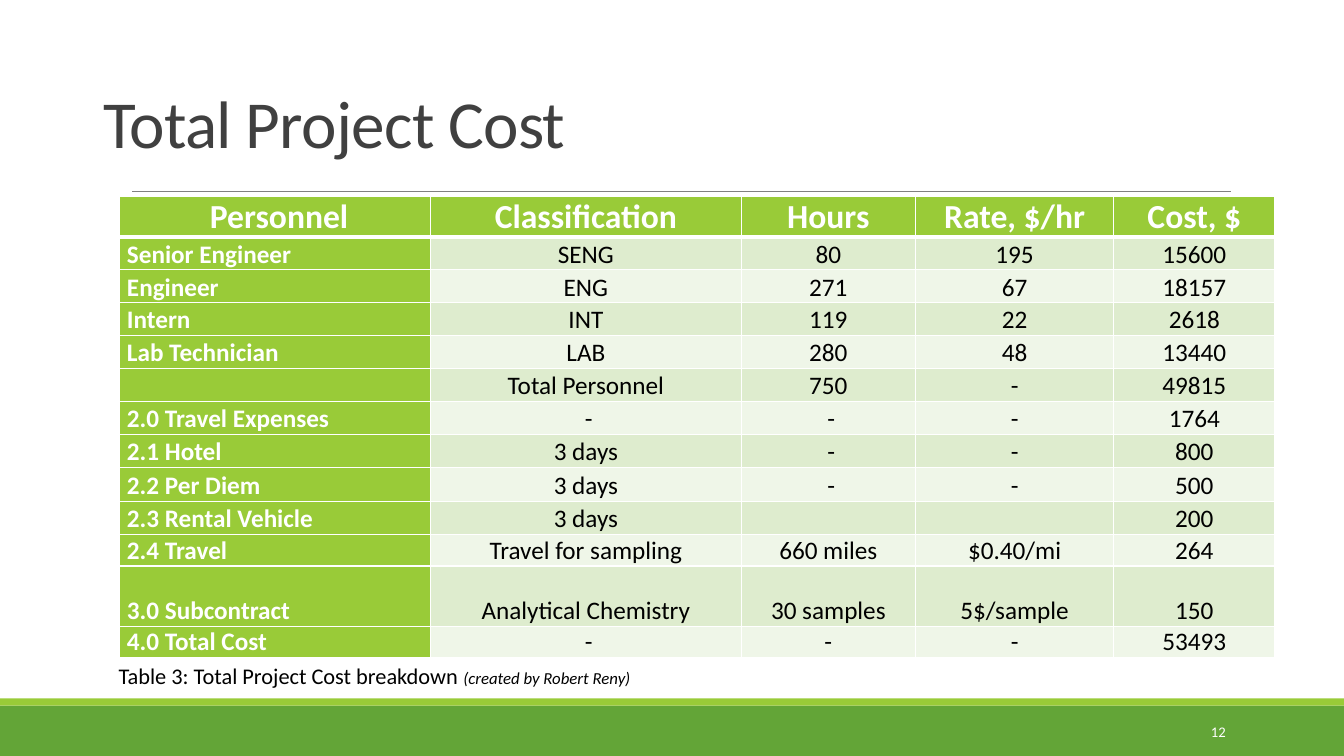
import pptx
import pptx.dml.color
import pptx.enum.shapes
import pptx.enum.text
import pptx.oxml
import pptx.oxml.ns
import pptx.util

Cm, Pt = pptx.util.Cm, pptx.util.Pt
ALIGN = pptx.enum.text.PP_ALIGN
ANCHOR = pptx.enum.text.MSO_ANCHOR
SHAPE = pptx.enum.shapes.MSO_SHAPE

LIME, GREEN, WHITE, BLACK = "99CB38", "63A537", "FFFFFF", "000000"
BANDS = ("DEECCE", "EFF6E8")
COLUMN_WIDTHS = (7.83, 7.83, 4.39, 5, 4.06)
ROW_HEIGHTS = (1.02, *[0.83] * 7, 0.86, 0.83, 0.79, 1.52, 0.79)
COSTS = (
    (" Personnel", "Classification", "Hours", "Rate, $/hr", "Cost, $"),
    ("Senior Engineer", "SENG", "80", "195", "15600"),
    ("Engineer", "ENG", "271", "67", "18157"),
    ("Intern", "INT", "119", "22", "2618"),
    ("Lab Technician", "LAB", "280", "48", "13440"),
    ("", "Total Personnel", "750", " - ", "49815"),
    ("2.0 Travel Expenses", " -", " -", "-", "1764"),
    ("2.1 Hotel", "3 days", " -", "-", "800"),
    ("2.2 Per Diem", "3 days", " -", "-", "500"),
    ("2.3 Rental Vehicle", "3 days", "", "", "200"),
    ("2.4 Travel", "Travel for sampling", "660 miles", "$0.40/mi", "264"),
    ("3.0 Subcontract", "Analytical Chemistry", "30 samples", "5$/sample", "150"),
    ("4.0 Total Cost", " -", "-", "-", "53493"),
)


def color(hex_code):
    """Return the colour for a hex string."""
    return pptx.dml.color.RGBColor.from_string(hex_code)


def write(paragraph, text, size=18, ink=BLACK, bold=False, italic=False,
          align=ALIGN.LEFT, spacing=None):
    """Add one formatted run to a paragraph."""
    paragraph.alignment = align
    run = paragraph.add_run()
    run.text = text
    run.font.name = "Calibri"
    run.font.size = Pt(size)
    run.font.bold = bold
    run.font.italic = italic
    run.font.color.rgb = color(ink)
    if spacing is not None:
        run.font._element.set("spc", str(round(spacing * 100)))


def add_text_area(slide, box, anchor=ANCHOR.TOP):
    """Add a wrapping text box and return its first paragraph."""
    frame = slide.shapes.add_textbox(*map(Cm, box)).text_frame
    frame.word_wrap = True
    frame.vertical_anchor = anchor
    return frame.paragraphs[0]


def add_band(slide, box, fill):
    """Add a plain filled band."""
    band = slide.shapes.add_shape(SHAPE.RECTANGLE, *map(Cm, box))
    band.shadow.inherit = False
    band.fill.solid()
    band.fill.fore_color.rgb = color(fill)
    band.line.fill.background()


def add_footer(slide, left, top, width, height):
    """Draw the two green bands and the slide number."""
    strip = 0.18
    add_band(slide, (left, top + strip, width, height - strip), GREEN)
    add_band(slide, (left, top, width, strip), LIME)
    number = add_text_area(slide, (left + 27.51, top + 0.33, 3.63, 1.02), ANCHOR.MIDDLE)
    write(number, "12", size=10.5, ink=WHITE, align=ALIGN.RIGHT)


def add_heading(slide, left, top, width, height):
    """Draw the title and the thin rule below it."""
    title = add_text_area(slide, (left, top, width, height), ANCHOR.BOTTOM)
    title.line_spacing = 0.85
    write(title, "Total Project Cost", size=48, ink="404040", spacing=-0.5)
    rule_top = Cm(top + height + 0.61)
    rule = slide.shapes.add_connector(
        pptx.enum.shapes.MSO_CONNECTOR.STRAIGHT,
        Cm(left + 0.97), rule_top, Cm(left + width - 0.41), rule_top)
    rule.line.color.rgb = color("808080")
    rule.line.width = Pt(0.5)
    rule._element.spPr.append(pptx.oxml.parse_xml(
        f'<a:effectLst {pptx.oxml.ns.nsdecls("a")}/>'))


def add_borders(cell, bottom):
    """Give a cell white borders with the given bottom width in points."""
    properties = cell._tc.get_or_add_tcPr()
    widths = {"lnL": 1, "lnR": 1, "lnT": 1, "lnB": bottom}
    for position, (side, width) in enumerate(widths.items()):
        properties.insert(position, pptx.oxml.parse_xml(
            f'<a:{side} {pptx.oxml.ns.nsdecls("a")} w="{Pt(width)}">'
            f'<a:solidFill><a:srgbClr val="{WHITE}"/></a:solidFill></a:{side}>'))


def add_cost_table(slide, left, top, width, height):
    """Draw the cost table with its caption underneath."""
    table = slide.shapes.add_table(
        len(COSTS), len(COLUMN_WIDTHS), *map(Cm, (left, top, width, height))).table
    for column, column_width in zip(table.columns, COLUMN_WIDTHS):
        column.width = Cm(column_width)
    for row, row_height in zip(table.rows, ROW_HEIGHTS):
        row.height = Cm(row_height)
    for row_index, entries in enumerate(COSTS):
        header = row_index == 0
        for column_index, entry in enumerate(entries):
            cell = table.cell(row_index, column_index)
            label = header or column_index == 0
            cell.margin_left = cell.margin_right = Cm(0.18)
            cell.margin_top = cell.margin_bottom = 0
            cell.vertical_anchor = ANCHOR.BOTTOM
            cell.fill.solid()
            cell.fill.fore_color.rgb = color(LIME if label else BANDS[(row_index - 1) % 2])
            add_borders(cell, bottom=3 if header else 1)
            write(cell.text_frame.paragraphs[0], entry, size=24 if header else 18,
                  ink=WHITE if label else BLACK, bold=label,
                  align=ALIGN.LEFT if label and not header else ALIGN.CENTER)
    caption = add_text_area(slide, (left - 0.28, top + height, 15.93, 0.94))
    write(caption, "Table 3: Total Project Cost breakdown ", size=16)
    write(caption, "(created by Robert Reny)", size=12, italic=True)


def main():
    """Build and save the project cost slide."""
    deck = pptx.Presentation()
    deck.slide_width, deck.slide_height = Cm(33.87), Cm(19.05)
    slide = deck.slides.add_slide(deck.slide_layouts[6])
    add_footer(slide, 0, 17.6, 33.87, 1.45)
    add_heading(slide, 2.36, 0.79, 29.06, 3.43)
    add_cost_table(slide, 3.02, 4.95, sum(COLUMN_WIDTHS), sum(ROW_HEIGHTS))
    deck.save("out.pptx")


if __name__ == "__main__":
    main()
